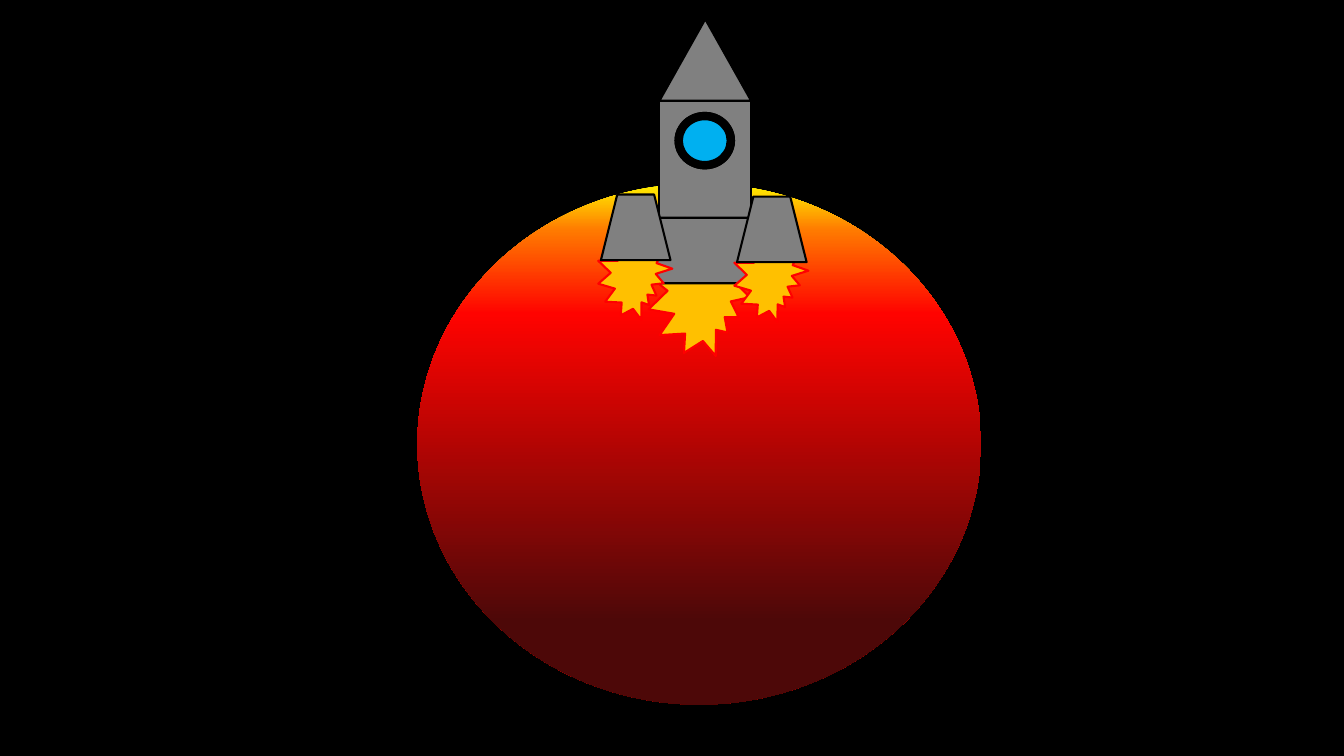
from copy import deepcopy

from pptx import Presentation
from pptx import util as u
from pptx.dml.color import RGBColor
from pptx.enum import shapes

SLIDE_SIZE = (13.33, 7.5)
COLORS = {
    "space": "000000", "outline": "000000", "hull": "808080", "glass": "00B0F0",
    "flame": "FFC000", "flame edge": "FF0000",
}
KINDS = shapes.MSO_SHAPE

# Lengths in inches: left, top, width, height
PLANET = (4.14, 1.82, 5.59, 5.17)
PLANET_STOPS = [(0, "FFF200"), (0.09, "FF7A00"), (0.25, "FF0300"), (0.84, "4D0808")]

BODY = (6.54, 1, 0.91, 1.54)
NOSE_HEIGHT = 0.81
MAIN_FLAME = (6.32, 2.18, 1.35, 1.26)
MAIN_FLAME_TURN = 321.5
MAIN_ENGINE = (6.3, 2.16, 1.38, 0.65)
PORTHOLE = (6.7, 1.12, 0.58, 0.55)
RIM_SHARE = 0.114

BOOSTERS = [(7.31, 1.95), (5.96, 1.93)]
BOOSTER_SIZE = (0.69, 0.65)
BOOSTER_FLAME_OFFSET = (-0.08, 0.32)
BOOSTER_FLAME_SIZE = (0.84, 0.87)
BOOSTER_FLAME_TURN = 325.2


def color(name):
    return RGBColor.from_string(COLORS[name])


def add_part(parent, kind, box, fill, line="outline", turn=0):
    shape = parent.shapes.add_shape(kind, *map(u.Inches, box))
    shape.shadow.inherit = False
    shape.rotation = turn
    shape.fill.solid()
    shape.fill.fore_color.rgb = color(fill)
    shape.line.color.rgb = color(line)
    shape.line.width = u.Pt(1.5)
    return shape


def add_engine(rocket, engine, flame, turn):
    """Add a flame with its engine in front of it."""
    add_part(rocket, KINDS.EXPLOSION2, flame, "flame", "flame edge", turn)
    add_part(rocket, KINDS.TRAPEZOID, engine, "hull")


def add_planet(slide):
    planet = slide.shapes.add_shape(KINDS.OVAL, *map(u.Inches, PLANET))
    planet.shadow.inherit = False
    planet.line.fill.background()
    planet.fill.gradient()
    planet.fill.gradient_angle = 270
    stop_list = planet._element.spPr.gradFill.gsLst
    while len(stop_list) < len(PLANET_STOPS):
        stop_list.append(deepcopy(stop_list[0]))
    for stop, (position, shade) in zip(planet.fill.gradient_stops, PLANET_STOPS):
        stop.position = position
        stop.color.rgb = RGBColor.from_string(shade)


def add_rocket(slide):
    rocket = slide.shapes.add_group_shape()
    add_part(rocket, KINDS.RECTANGLE, BODY, "hull")
    add_engine(rocket, MAIN_ENGINE, MAIN_FLAME, MAIN_FLAME_TURN)
    for corner in BOOSTERS:
        flame_corner = tuple(a + b for a, b in zip(corner, BOOSTER_FLAME_OFFSET))
        add_engine(rocket, corner + BOOSTER_SIZE,
                   flame_corner + BOOSTER_FLAME_SIZE, BOOSTER_FLAME_TURN)
    left, top, width, _ = BODY
    nose = (left, top - NOSE_HEIGHT, width, NOSE_HEIGHT)
    add_part(rocket, KINDS.FLOWCHART_EXTRACT, nose, "hull")
    add_part(rocket, KINDS.OVAL, PORTHOLE, "glass")
    rim = add_part(rocket, KINDS.DONUT, PORTHOLE, "outline")
    rim.adjustments[0] = RIM_SHARE


def main():
    presentation = Presentation()
    presentation.slide_width, presentation.slide_height = map(u.Inches, SLIDE_SIZE)
    slide = presentation.slides.add_slide(presentation.slide_layouts[6])
    slide.background.fill.solid()
    slide.background.fill.fore_color.rgb = color("space")
    add_planet(slide)
    add_rocket(slide)
    presentation.save("out.pptx")


if __name__ == "__main__":
    main()
